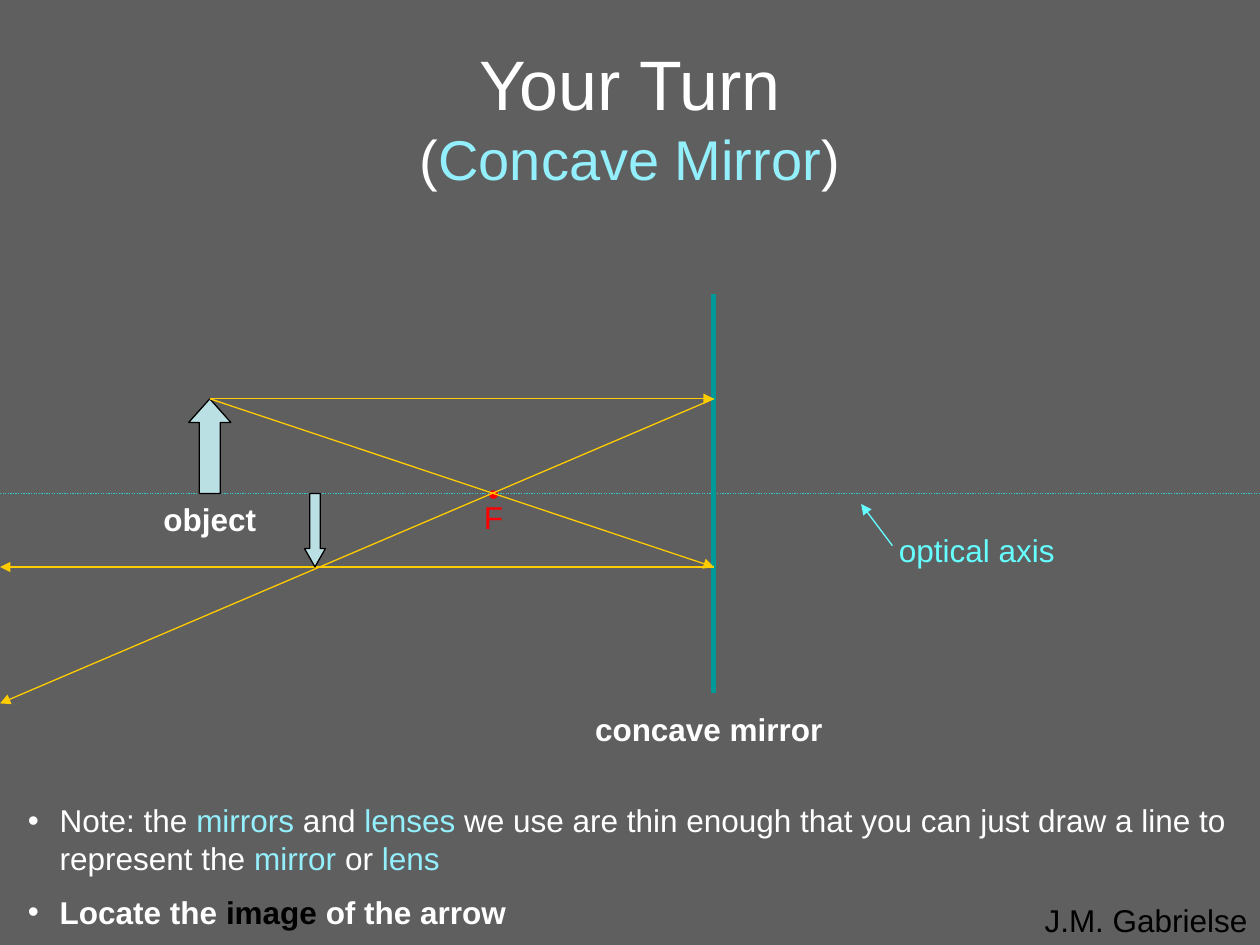
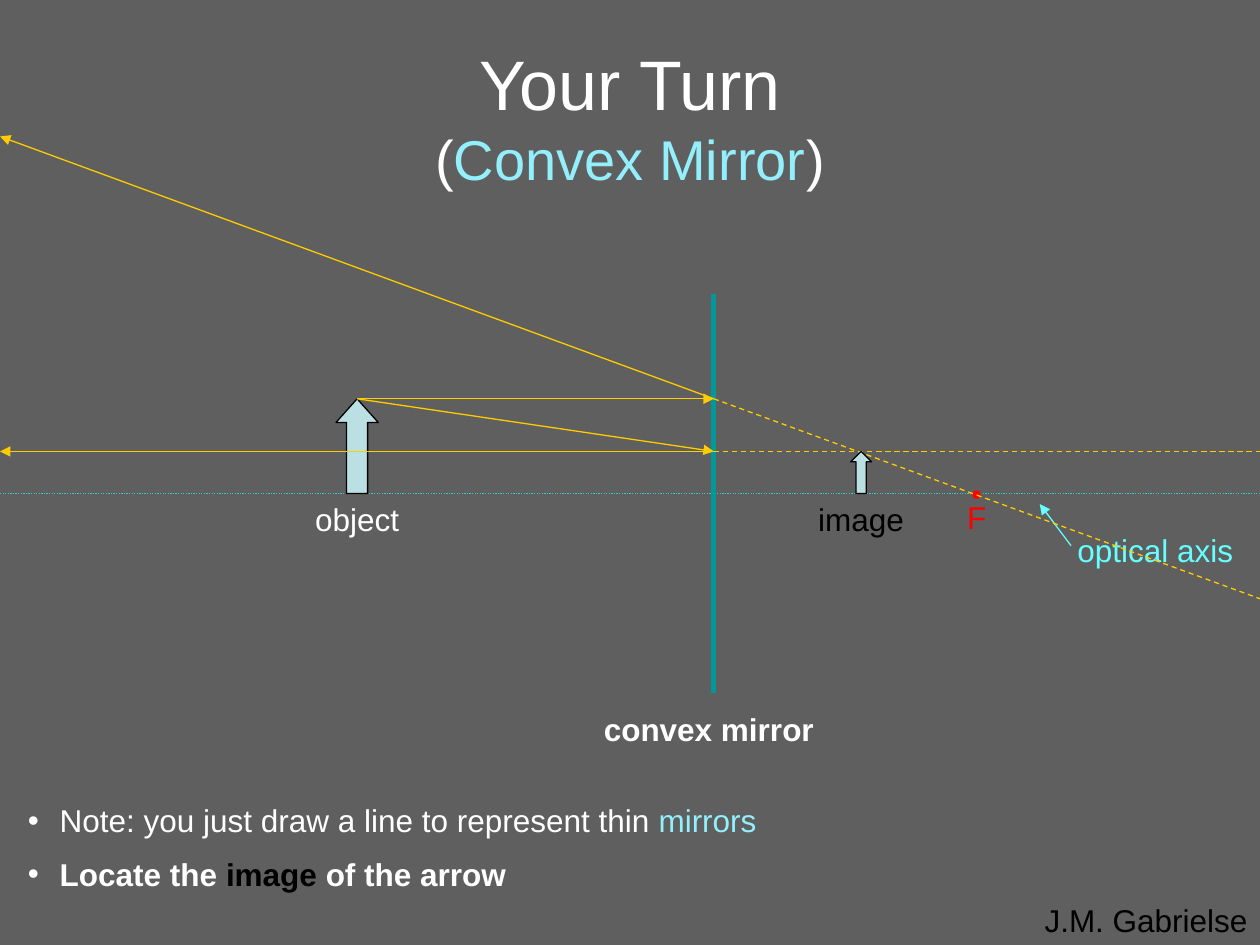
from lxml.etree import SubElement
from pptx import Presentation
from pptx.dml.color import RGBColor
from pptx.enum.dml import MSO_LINE
from pptx.enum.shapes import MSO_CONNECTOR, MSO_SHAPE
from pptx.enum.text import MSO_ANCHOR, MSO_AUTO_SIZE, PP_ALIGN
from pptx.oxml.ns import qn
from pptx.util import Cm, Pt

COLORS = {
    "background": "5F5F5F", "text": "FFFFFF", "term": "93EFFB", "dark": "000000",
    "axis": "33CCCC", "axis_label": "66FFFF", "focus": "FF0000",
    "mirror": "009999", "ray": "FFCC00", "arrow": "BBE0E3",
}
FONT = "Arial"

# Shared diagram geometry, in centimetres
SLIDE_W, SLIDE_H = 25.4, 19.05
AXIS_Y = 9.95
MIRROR_X, MIRROR_TOP, MIRROR_BOTTOM = 14.39, 5.93, 13.97
OBJECT_TIP_Y = 8.04
LABEL_H = 1.02


def color(key):
    return RGBColor.from_string(COLORS[key])


def style(font, color_key, size=18, bold=False):
    font.name, font.size, font.bold = FONT, Pt(size), bold
    font.color.rgb = color(color_key)


def add_runs(paragraph, parts, size=None):
    """Add (text, colour key) parts; None keeps the paragraph colour."""
    for text, color_key in parts:
        run = paragraph.add_run()
        run.text = text
        if size:
            run.font.size = Pt(size)
        if color_key:
            run.font.color.rgb = color(color_key)


def place(shape, left, top, width, height):
    shape.left, shape.top = Cm(left), Cm(top)
    shape.width, shape.height = Cm(width), Cm(height)


def add_title(slide, mirror_kind):
    title = slide.shapes.title
    place(title, 1.27, 0.76, 22.86, 3.18)
    frame = title.text_frame
    frame.auto_size = MSO_AUTO_SIZE.NONE
    frame.vertical_anchor = MSO_ANCHOR.MIDDLE
    heading = frame.paragraphs[0]
    heading.alignment = PP_ALIGN.CENTER
    style(heading.font, "text", 40)
    add_runs(heading, [("Your Turn", None)], 40)
    heading.add_line_break()
    add_runs(heading, [("(", None), (f"{mirror_kind} Mirror", "term"), (")", None)], 32)


def add_notes_list(slide, note_parts, height):
    notes = slide.placeholders[1]
    place(notes, 0, 16.03, SLIDE_W, height)
    frame = notes.text_frame
    frame.auto_size = MSO_AUTO_SIZE.NONE
    task_parts = [("Locate the ", None), ("image", "dark"), (" of the arrow", None)]
    for index, parts in enumerate([note_parts, task_parts]):
        item = frame.add_paragraph() if index else frame.paragraphs[0]
        item.space_before = Pt(9 * index)
        style(item.font, "text", bold=index == 1)
        properties = item._p.get_or_add_pPr()
        properties.set("marL", str(Cm(0.95)))
        properties.set("indent", str(Cm(-0.64)))
        add_runs(item, parts)


def add_label(slide, text, center_x, top, width, color_key="text", bold=False,
              align=PP_ALIGN.CENTER):
    label = slide.shapes.add_textbox(
        Cm(center_x - width / 2), Cm(top), Cm(width), Cm(LABEL_H))
    label.text_frame.word_wrap = True
    paragraph = label.text_frame.paragraphs[0]
    paragraph.text = text
    paragraph.alignment = align
    style(paragraph.font, color_key, bold=bold)
    return label


def add_line(slide, start, end, color_key, width=0.75, dash=None, arrow=False):
    line = slide.shapes.add_connector(
        MSO_CONNECTOR.STRAIGHT, *(Cm(value) for value in (*start, *end)))
    line.line.color.rgb = color(color_key)
    line.line.width = Pt(width)
    if dash:
        line.line.dash_style = dash
    properties = line._element.spPr
    if arrow:
        SubElement(properties.find(qn("a:ln")), qn("a:tailEnd"), type="triangle")
    SubElement(properties, qn("a:effectLst"))


def add_rays(slide, *rays):
    for start, end in rays:
        add_line(slide, start, end, "ray", arrow=True)


def add_upright_arrow(slide, center_x, tip_y, width, head):
    """Block arrow standing on the optical axis, pointing to tip_y."""
    preset = MSO_SHAPE.UP_ARROW if tip_y < AXIS_Y else MSO_SHAPE.DOWN_ARROW
    arrow = slide.shapes.add_shape(
        preset, Cm(center_x - width / 2), Cm(min(tip_y, AXIS_Y)),
        Cm(width), Cm(abs(tip_y - AXIS_Y)))
    arrow.adjustments[0], arrow.adjustments[1] = 0.5, head
    arrow.shadow.inherit = False
    arrow.fill.solid()
    arrow.fill.fore_color.rgb = color("arrow")
    arrow.line.color.rgb = color("dark")
    arrow.line.width = Pt(0.75)


def add_focus(slide, center_x):
    focus = add_label(slide, "•", center_x, AXIS_Y, 2, "focus").text_frame
    letter = focus.add_paragraph()
    letter.text = "F"
    letter.alignment = PP_ALIGN.CENTER
    letter.space_before = Pt(9)
    style(letter.font, "focus")
    for paragraph in focus.paragraphs:
        paragraph.line_spacing = 0.2


def add_mirror_slide(prs, kind, note_parts, notes_height, object_x, focus_x,
                     axis_label_x, bold_object):
    """Everything the two exercises share, up to the object arrow."""
    slide = prs.slides.add_slide(prs.slide_layouts[1])
    add_label(slide, "J.M. Gabrielse", 21.8, 18.03, 7.2, "dark", align=PP_ALIGN.RIGHT)
    # Optical axis with its pointer
    add_line(slide, (0, AXIS_Y), (SLIDE_W, AXIS_Y), "axis", dash=MSO_LINE.ROUND_DOT)
    add_label(slide, "optical axis", axis_label_x, 10.58, 4.2, "axis_label")
    add_line(slide, (axis_label_x - 1.7, 11), (axis_label_x - 2.33, 10.16),
             "axis_label", arrow=True)
    # Title, notes and focal point
    add_title(slide, kind)
    add_notes_list(slide, note_parts, notes_height)
    add_focus(slide, focus_x)
    # Mirror and object
    add_line(slide, (MIRROR_X, MIRROR_TOP), (MIRROR_X, MIRROR_BOTTOM), "mirror", 3)
    add_label(slide, f"{kind.lower()} mirror", 14.29, 14.18, 5.3, bold=True)
    add_upright_arrow(slide, object_x, OBJECT_TIP_Y, 0.85, 0.56)
    add_label(slide, "object", object_x, AXIS_Y, 2.96, bold=bold_object)
    return slide


def add_concave_slide(prs):
    note = [("Note: the ", None), ("mirrors", "term"), (" and ", None),
            ("lenses", "term"),
            (" we use are thin enough that you can just draw a line to represent the ", None),
            ("mirror ", "term"), ("or ", None), ("lens", "term")]
    object_x, image_x, image_tip_y = 4.23, 6.35, 11.43
    slide = add_mirror_slide(prs, "Concave", note, 2.92, object_x, focus_x=9.95,
                             axis_label_x=19.69, bold_object=True)
    tip = (object_x, OBJECT_TIP_Y)
    parallel_hit, focal_hit = (MIRROR_X, OBJECT_TIP_Y), (MIRROR_X, image_tip_y)
    add_rays(slide, (tip, parallel_hit), (parallel_hit, (0, 14.18)),
             (tip, focal_hit), (focal_hit, (0, image_tip_y)))
    add_upright_arrow(slide, image_x, image_tip_y, 0.42, 0.88)


def add_convex_slide(prs):
    note = [("Note: you just draw a line to represent thin ", None), ("mirrors", "term")]
    object_x, image_x, image_tip_y = 7.2, 17.36, 9.1
    slide = add_mirror_slide(prs, "Convex", note, 2.16, object_x, focus_x=19.69,
                             axis_label_x=23.29, bold_object=False)
    tip = (object_x, OBJECT_TIP_Y)
    parallel_hit, focal_hit = (MIRROR_X, OBJECT_TIP_Y), (MIRROR_X, image_tip_y)
    # Virtual rays behind the mirror
    for hit, end_y in ((parallel_hit, 12.07), (focal_hit, image_tip_y)):
        add_line(slide, hit, (SLIDE_W, end_y), "ray", dash=MSO_LINE.DASH)
    add_rays(slide, (tip, parallel_hit), (parallel_hit, (0, 2.75)),
             (tip, focal_hit), (focal_hit, (0, image_tip_y)))
    add_upright_arrow(slide, image_x, image_tip_y, 0.42, 0.5)
    add_label(slide, "image", image_x, AXIS_Y, 2.96, "dark")


def main():
    prs = Presentation()
    prs.slide_width, prs.slide_height = Cm(SLIDE_W), Cm(SLIDE_H)
    backdrop = prs.slide_master.background.fill
    backdrop.solid()
    backdrop.fore_color.rgb = color("background")
    add_concave_slide(prs)
    add_convex_slide(prs)
    prs.save("out.pptx")


if __name__ == "__main__":
    main()
